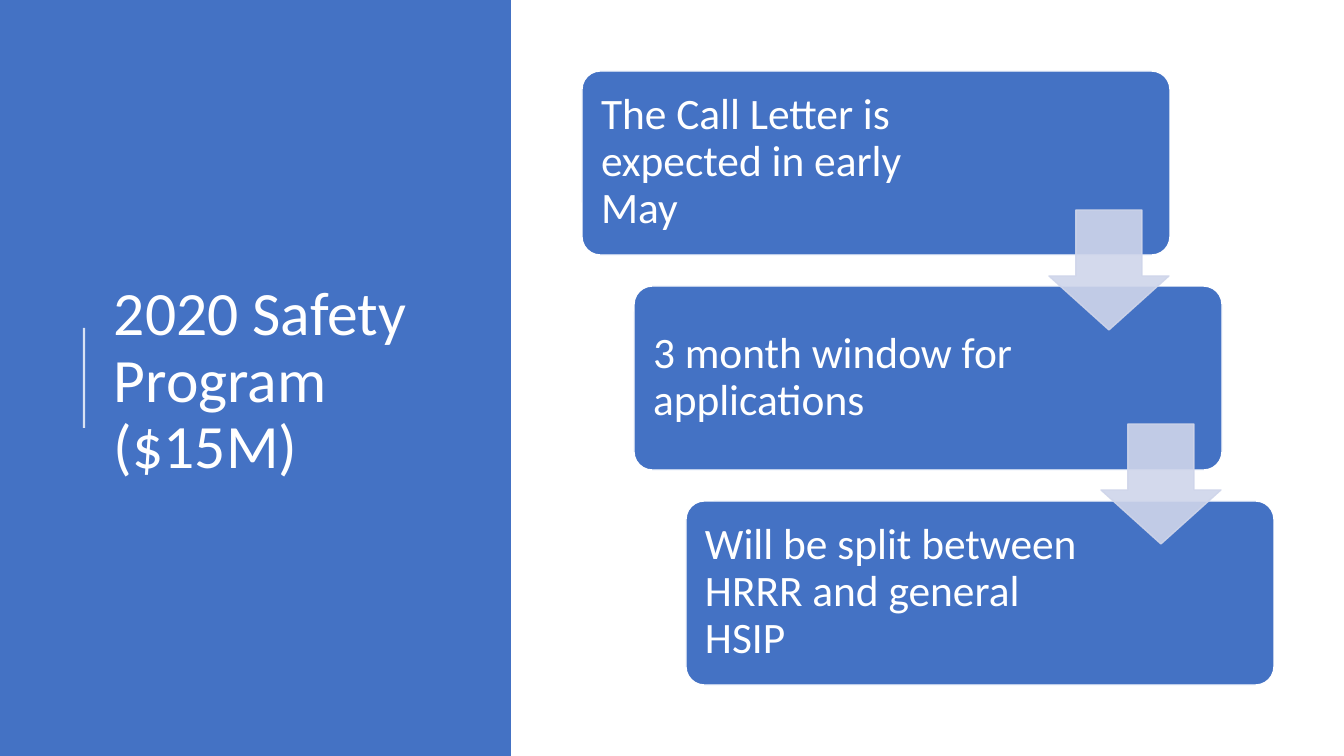
"""Build the 2020 Safety Program slide: a title panel beside three descending steps."""
from lxml import etree
from pptx import Presentation
from pptx import util as u
from pptx.dml.color import RGBColor
from pptx.enum import shapes, text
from pptx.oxml import ns

TITLE = "2020 Safety Program\v($15M)"
STEPS = [
    ("The Call Letter is expected in early May", 388),
    ("3 month window for applications", 405),
    ("Will be split between HRRR and general HSIP", 405),
]

BLUE = RGBColor(0x44, 0x72, 0xC4)
PALE = RGBColor(0xCF, 0xD5, 0xEA)
WHITE = RGBColor(0xFF, 0xFF, 0xFF)
FONT = "Calibri"

SLIDE_WIDTH, SLIDE_HEIGHT = 1344, 756
PANEL_WIDTH = 511
STEP_LEFT, STEP_TOP, STEP_WIDTH, STEP_HEIGHT = 582, 71, 588, 184
STEP_RIGHT, STEP_DOWN = 52, 215
LABEL_X, LABEL_Y, LABEL_HEIGHT = 6, 5, 173
ARROW_LEFT, ARROW_TOP, ARROW_SIZE, ARROW_DOWN = 1049, 210, 120, 214


def px(*lengths):
    """Turn pixel lengths into EMU."""
    return [u.Emu(round(length * 914400 / 100.8)) for length in lengths]


def set_alpha(element, percent):
    """Make every colour inside the element partly transparent."""
    for color in element.iter(ns.qn("a:srgbClr")):
        etree.SubElement(color, ns.qn("a:alpha")).set("val", str(percent * 1000))


def add_block(slide, preset, box, fill, line=None, adjustments=()):
    """Add a filled preset shape."""
    shape = slide.shapes.add_shape(preset, *px(*box))
    shape.shadow.inherit = False
    shape.fill.solid()
    shape.fill.fore_color.rgb = fill
    if line is None:
        shape.line.fill.background()
    else:
        shape.line.color.rgb = line
        shape.line.width = u.Pt(1)
    for index, value in enumerate(adjustments):
        shape.adjustments[index] = value
    return shape


def add_label(slide, content, box, size, inset=None):
    """Add a vertically centred white text box."""
    frame = slide.shapes.add_textbox(*px(*box)).text_frame
    frame.word_wrap = True
    frame.vertical_anchor = text.MSO_ANCHOR.MIDDLE
    if inset is not None:
        frame.margin_left = frame.margin_right = px(inset)[0]
        frame.margin_top = frame.margin_bottom = px(inset)[0]
    paragraph = frame.paragraphs[0]
    paragraph.text = content
    paragraph.line_spacing = 0.9
    for run in paragraph.runs:
        run.font.name = FONT
        run.font.size = u.Pt(size)
        run.font.color.rgb = WHITE


def main():
    presentation = Presentation()
    presentation.slide_width, presentation.slide_height = px(SLIDE_WIDTH, SLIDE_HEIGHT)
    slide = presentation.slides.add_slide(presentation.slide_layouts[6])

    add_block(slide, shapes.MSO_SHAPE.RECTANGLE, (0, 0, PANEL_WIDTH, SLIDE_HEIGHT), BLUE)
    rule = slide.shapes.add_connector(shapes.MSO_CONNECTOR.STRAIGHT, *px(84, 428, 84, 328))
    rule.line.color.rgb = WHITE
    rule.line.width = u.Pt(1.5)
    properties = rule._element.spPr
    set_alpha(properties, 80)
    etree.SubElement(properties, ns.qn("a:effectLst"))
    add_label(slide, TITLE, (104, 79, 372, 607), 44)

    for index, (content, label_width) in enumerate(STEPS):
        left, top = STEP_LEFT + index * STEP_RIGHT, STEP_TOP + index * STEP_DOWN
        add_block(slide, shapes.MSO_SHAPE.ROUNDED_RECTANGLE,
                  (left, top, STEP_WIDTH, STEP_HEIGHT), BLUE, WHITE, [0.1])
        add_label(slide, content,
                  (left + LABEL_X, top + LABEL_Y, label_width, LABEL_HEIGHT), 31, 13)

    for index in range(len(STEPS) - 1):
        box = (ARROW_LEFT + index * STEP_RIGHT, ARROW_TOP + index * ARROW_DOWN,
               ARROW_SIZE, ARROW_SIZE)
        arrow = add_block(slide, shapes.MSO_SHAPE.DOWN_ARROW, box, PALE, PALE, [0.55, 0.45])
        set_alpha(arrow._element.spPr, 90)

    presentation.save("out.pptx")


if __name__ == "__main__":
    main()
